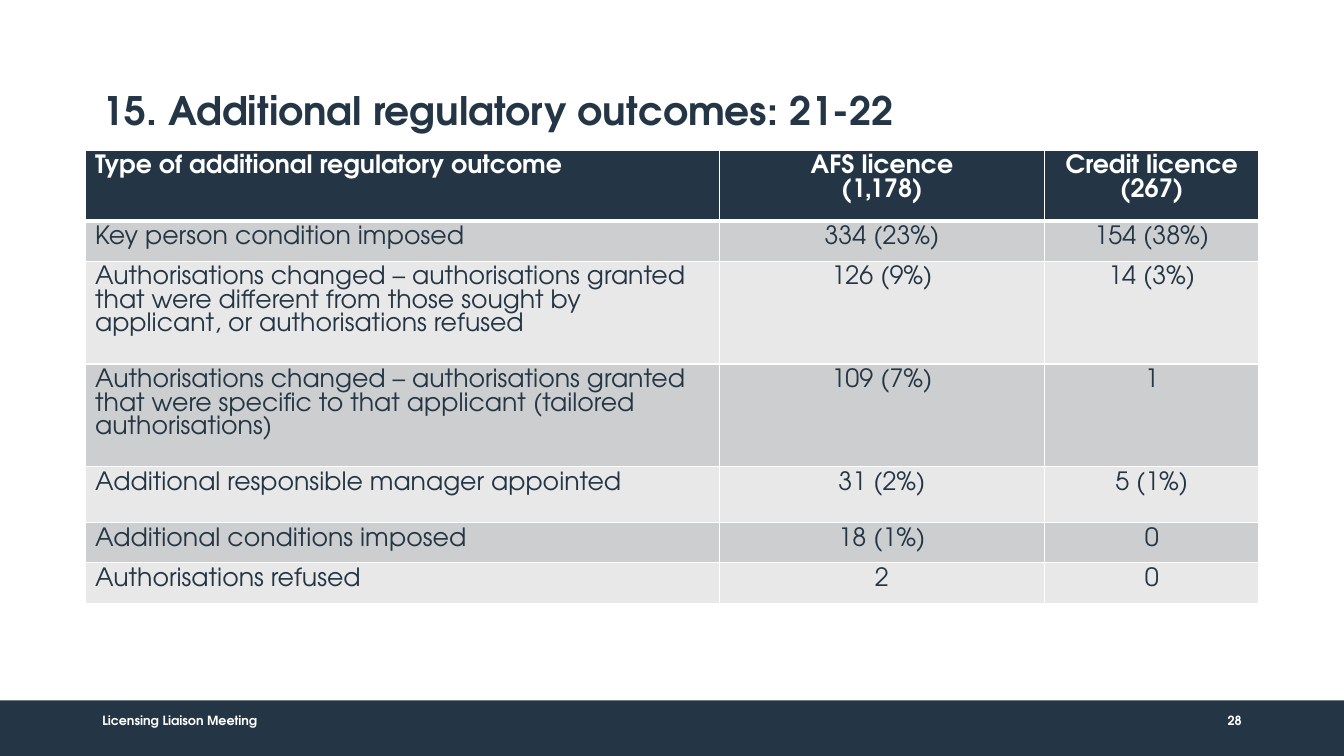
"""Build the slide on additional regulatory outcomes."""
import dataclasses

import lxml.etree
import pptx
import pptx.dml.color
import pptx.enum.shapes
import pptx.enum.text
import pptx.oxml.ns
import pptx.util

ALIGN = pptx.enum.text.PP_ALIGN
MIDDLE = pptx.enum.text.MSO_ANCHOR.MIDDLE


@dataclasses.dataclass(frozen=True)
class Theme:
    font: str = "TeX Gyre Adventor"
    navy: str = "243645"
    white: str = "FFFFFF"
    bands: tuple = ("CDCECF", "E8E8E9")
    title: int = 28
    body: int = 18
    foot: int = 9


THEME = Theme()
COLS = (604, 310, 204)
HEIGHTS = (63, 37, 98, 98, 53, 36, 36)
ROWS = (
    ("Type of additional regulatory outcome", "AFS licence\n(1,178)", "Credit licence (267)"),
    ("Key person condition imposed", "334 (23%)", "154 (38%)"),
    ("Authorisations changed – authorisations granted that were different "
     "from those sought by applicant, or authorisations refused", "126 (9%)", "14 (3%)"),
    ("Authorisations changed – authorisations granted that were specific "
     "to that applicant (tailored authorisations)", "109 (7%)", "1"),
    ("Additional responsible manager appointed", "31 (2%)", "5 (1%)"),
    ("Additional conditions imposed", "18 (1%)", "0"),
    ("Authorisations refused", "2", "0"),
)


def px(count):
    return pptx.util.Emu(count * 9525)


def tint(code):
    return pptx.dml.color.RGBColor.from_string(code)


def paint(item, code):
    item.fill.solid()
    item.fill.fore_color.rgb = tint(code)


def write(frame, text, size, code, bold, align=ALIGN.LEFT):
    frame.text = text
    for para in frame.paragraphs:
        para.alignment = align
        font = para.font
        font.name, font.size, font.bold = THEME.font, pptx.util.Pt(size), bold
        font.color.rgb = tint(code)


def label(slide, box, text, size, code, align=ALIGN.LEFT):
    frame = slide.shapes.add_textbox(*map(px, box)).text_frame
    frame.word_wrap = True
    frame.vertical_anchor = MIDDLE
    write(frame, text, size, code, True, align)
    return frame


def band(slide, box):
    kind = pptx.enum.shapes.MSO_SHAPE.RECTANGLE
    shape = slide.shapes.add_shape(kind, *map(px, box))
    shape.shadow.inherit = False
    paint(shape, THEME.navy)
    shape.line.fill.background()


def edge(cell, side, width):
    name = pptx.oxml.ns.qn
    props = cell._tc.get_or_add_tcPr()
    line = lxml.etree.SubElement(props, name("a:ln" + side), w=str(pptx.util.Pt(width)))
    fill = lxml.etree.SubElement(line, name("a:solidFill"))
    lxml.etree.SubElement(fill, name("a:srgbClr"), val=THEME.white)


def grid(slide, left, top):
    box = (left, top, sum(COLS), sum(HEIGHTS))
    table = slide.shapes.add_table(len(ROWS), len(COLS), *map(px, box)).table
    for col, width in zip(table.columns, COLS):
        col.width = px(width)
    for r, (texts, height) in enumerate(zip(ROWS, HEIGHTS)):
        table.rows[r].height = px(height)
        head = r == 0
        widths = {"L": 1, "R": 1, "T": 3 if r == 1 else 1, "B": 3 if head else 1}
        for c, text in enumerate(texts):
            cell = table.cell(r, c)
            for side, width in widths.items():
                edge(cell, side, width)
            paint(cell, THEME.navy if head else THEME.bands[(r - 1) % 2])
            write(cell.text_frame, text, THEME.body, THEME.white if head else THEME.navy,
                  head, ALIGN.CENTER if c else ALIGN.LEFT)


def main():
    deck = pptx.Presentation()
    deck.slide_width, deck.slide_height = px(1280), px(720)
    slide = deck.slides.add_slide(deck.slide_layouts[6])
    band(slide, (0, 667, 1280, 53))
    title = label(slide, (88, 38, 1116, 139), "15. Additional regulatory outcomes: 21-22",
                  THEME.title, THEME.navy)
    title.paragraphs[0].line_spacing = 0.9
    label(slide, (88, 667, 767, 38), "Licensing Liaison Meeting", THEME.foot, THEME.white)
    page = label(slide, (1154, 667, 38, 38), "28", THEME.foot, THEME.white, ALIGN.RIGHT)
    page.margin_left = 0
    grid(slide, 81, 143)
    deck.save("out.pptx")


if __name__ == "__main__":
    main()
